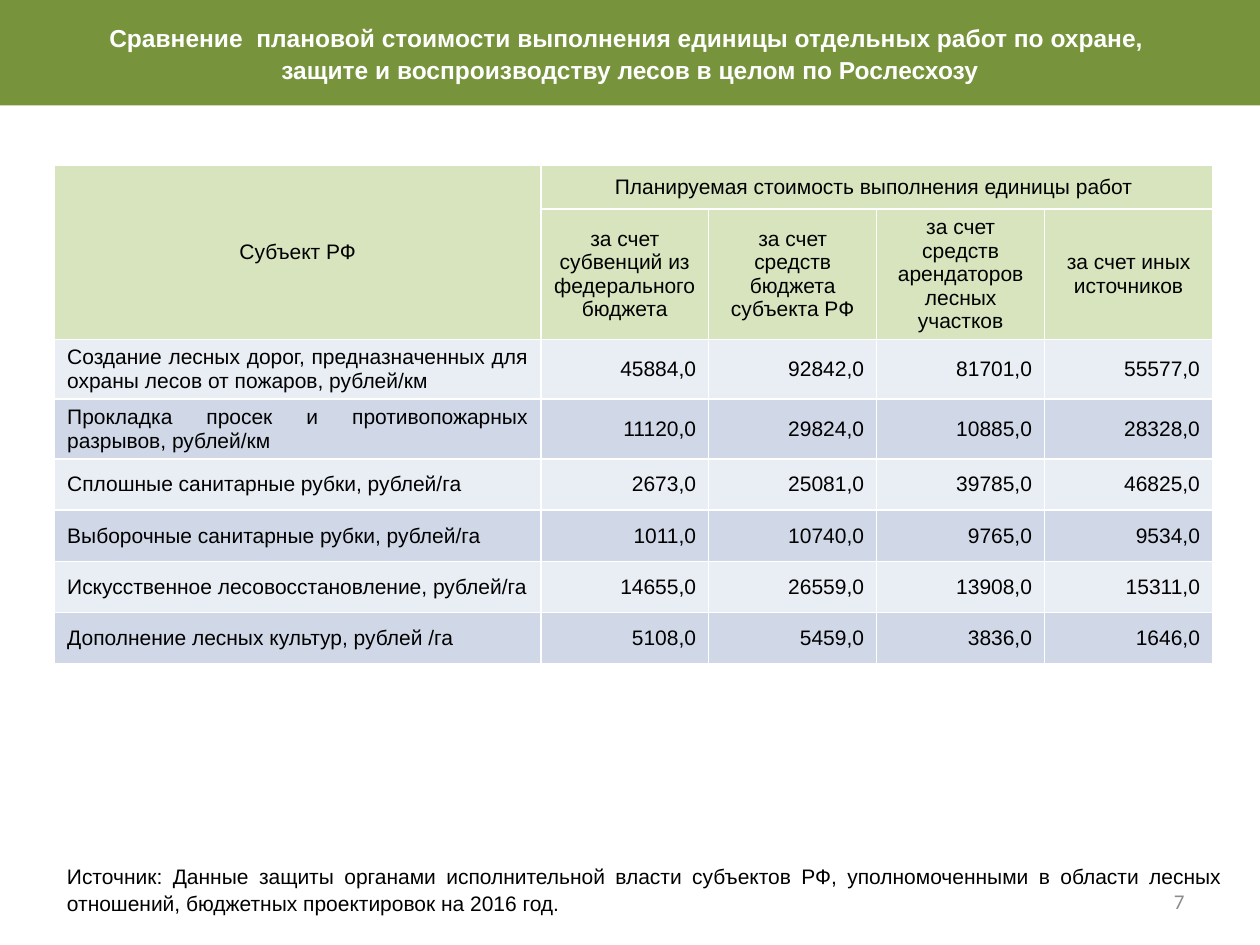
"""Build the slide comparing planned unit costs of forest protection work."""
import pptx
import pptx.dml.color
import pptx.enum.text
import pptx.oxml
import pptx.oxml.ns
import pptx.util

Pt = pptx.util.Pt
RGBColor = pptx.dml.color.RGBColor
ALIGN = pptx.enum.text.PP_ALIGN
MIDDLE = pptx.enum.text.MSO_ANCHOR.MIDDLE

GREEN = RGBColor(0x77, 0x93, 0x3C)
PALE_GREEN = RGBColor(0xD7, 0xE4, 0xBD)
BANDS = [RGBColor(0xE9, 0xED, 0xF4), RGBColor(0xD0, 0xD8, 0xE8)]
WHITE = RGBColor(0xFF, 0xFF, 0xFF)
BLACK = RGBColor(0, 0, 0)
GREY = RGBColor(0x8C, 0x8C, 0x8C)

TITLE_FONT = {"name": "Arial", "size": Pt(14), "bold": True}
BODY_FONT = {"name": "Arial", "size": Pt(12), "bold": False}
NUMBER_FONT = {"name": "Calibri", "size": Pt(12), "bold": False}


def write(frame, lines, font, color, alignment, spacing=None):
    frame.word_wrap = True
    for index, line in enumerate(lines):
        paragraph = frame.paragraphs[0] if index == 0 else frame.add_paragraph()
        paragraph.alignment = alignment
        paragraph.line_spacing = spacing
        run = paragraph.add_run()
        run.text = line
        for attribute, value in font.items():
            setattr(run.font, attribute, value)
        run.font.color.rgb = color


def fill_cell(cell, text, fill, alignment):
    write(cell.text_frame, [text], BODY_FONT, BLACK, alignment)
    cell.vertical_anchor = MIDDLE
    properties = cell._tc.get_or_add_tcPr()
    for side in ("lnL", "lnR", "lnT", "lnB"):
        properties.append(pptx.oxml.parse_xml(
            f'<a:{side} {pptx.oxml.ns.nsdecls("a")} w="{Pt(1)}"><a:solidFill>'
            f'<a:srgbClr val="{WHITE}"/></a:solidFill></a:{side}>'))
    cell.fill.solid()
    cell.fill.fore_color.rgb = fill


presentation = pptx.Presentation()
presentation.slide_width = Pt(720)
presentation.slide_height = Pt(540)
slide = presentation.slides.add_slide(presentation.slide_layouts[5])

title = slide.shapes.title
title.left, title.top, title.width, title.height = Pt(0), Pt(0), Pt(720), Pt(60.2)
title.fill.solid()
title.fill.fore_color.rgb = GREEN
title.text_frame.auto_size = pptx.enum.text.MSO_AUTO_SIZE.NONE
title.text_frame.vertical_anchor = MIDDLE
write(title.text_frame, [
    "Сравнение  плановой стоимости выполнения единицы отдельных работ по охране, ",
    "защите и воспроизводству лесов в целом по Рослесхозу",
], TITLE_FONT, WHITE, ALIGN.CENTER, 1.07)

funding_sources = [
    "за счет субвенций из федерального бюджета",
    "за счет средств бюджета субъекта РФ",
    "за счет средств арендаторов лесных участков",
    "за счет иных источников",
]
work_costs = [
    ("Создание лесных дорог, предназначенных для охраны лесов от пожаров, рублей/км",
     "45884,0", "92842,0", "81701,0", "55577,0"),
    ("Прокладка просек и противопожарных разрывов, рублей/км",
     "11120,0", "29824,0", "10885,0", "28328,0"),
    ("Сплошные санитарные рубки, рублей/га", "2673,0", "25081,0", "39785,0", "46825,0"),
    ("Выборочные санитарные рубки, рублей/га", "1011,0", "10740,0", "9765,0", "9534,0"),
    ("Искусственное лесовосстановление, рублей/га",
     "14655,0", "26559,0", "13908,0", "15311,0"),
    ("Дополнение лесных культур, рублей /га", "5108,0", "5459,0", "3836,0", "1646,0"),
]
column_widths = [277.8] + [96] * 4
row_heights = [25, 74.3] + [34] * 2 + [29.3] * 4

costs = slide.shapes.add_table(
    len(row_heights), len(column_widths), Pt(31.2), Pt(94.6),
    Pt(sum(column_widths)), Pt(sum(row_heights))).table
costs.first_row = False
costs.horz_banding = False
for column, width in zip(costs.columns, column_widths):
    column.width = Pt(width)
for row, height in zip(costs.rows, row_heights):
    row.height = Pt(height)

header_rows = [
    ["Субъект РФ", "Планируемая стоимость выполнения единицы работ ", "", "", ""],
    ["", *funding_sources],
]
for row_index, header in enumerate(header_rows):
    for column_index, text in enumerate(header):
        fill_cell(costs.cell(row_index, column_index), text, PALE_GREEN, ALIGN.CENTER)
costs.cell(0, 0).merge(costs.cell(1, 0))
costs.cell(0, 1).merge(costs.cell(0, 4))

for work_index, work in enumerate(work_costs):
    for column_index, text in enumerate(work):
        alignment = ALIGN.RIGHT if column_index else ALIGN.JUSTIFY
        fill_cell(costs.cell(work_index + 2, column_index), text,
                  BANDS[work_index % 2], alignment)

slide_number = slide.shapes.add_textbox(Pt(516), Pt(500.5), Pt(168), Pt(28.75))
slide_number.text_frame.vertical_anchor = MIDDLE
write(slide_number.text_frame, ["7"], NUMBER_FONT, GREY, ALIGN.RIGHT)

data_source = slide.shapes.add_textbox(Pt(31.2), Pt(488.9), Pt(674.6), Pt(36))
write(data_source.text_frame, [
    "Источник: Данные защиты органами исполнительной власти субъектов РФ, "
    "уполномоченными в области лесных отношений, бюджетных проектировок на 2016 год.",
], BODY_FONT, BLACK, ALIGN.JUSTIFY, 1.07)

presentation.save("out.pptx")
